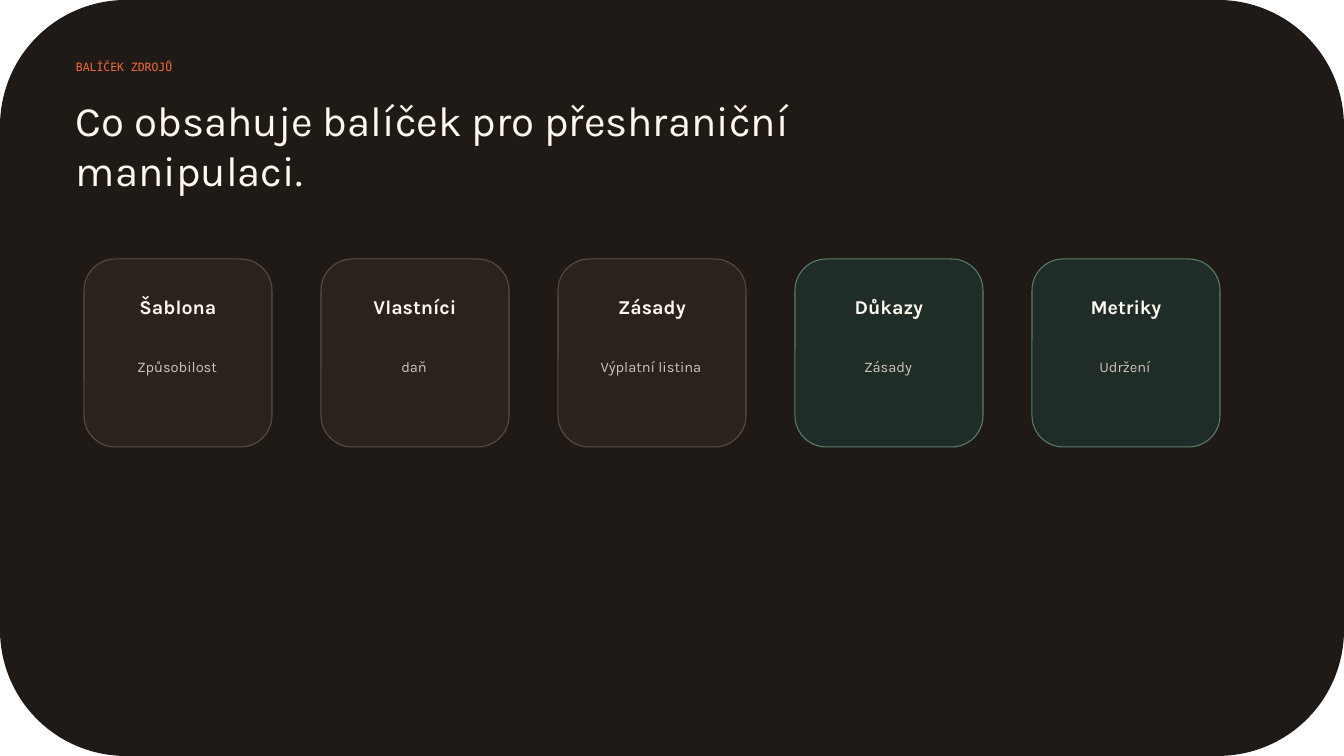
import pptx
import pptx.dml.color
import pptx.enum.shapes
import pptx.enum.text
import pptx.util

RGBColor = pptx.dml.color.RGBColor
Align = pptx.enum.text.PP_ALIGN

INK = RGBColor(0x20, 0x1A, 0x16)
CREAM = RGBColor(0xFF, 0xF9, 0xEF)
SAND = RGBColor(0xCF, 0xC4, 0xB8)
ORANGE = RGBColor(0xF2, 0x6B, 0x3A)
BROWN = RGBColor(0x2A, 0x22, 0x1D)
BROWN_EDGE = RGBColor(0x5B, 0x4D, 0x44)
GREEN = RGBColor(0x1F, 0x2C, 0x27)
GREEN_EDGE = RGBColor(0x5C, 0x7E, 0x6B)

WIDTH, HEIGHT = 1344, 756
EMU_PER_PX = 914400 / 100.8
CARD_LEFT, CARD_TOP, CARD_SIZE, CARD_STEP = 84, 259, 188, 237

CARDS = [
    ("Šablona", "Způsobilost", BROWN, BROWN_EDGE),
    ("Vlastníci", "daň", BROWN, BROWN_EDGE),
    ("Zásady", "Výplatní listina", BROWN, BROWN_EDGE),
    ("Důkazy", "Zásady", GREEN, GREEN_EDGE),
    ("Metriky", "Udržení", GREEN, GREEN_EDGE),
]


def px(n):
    """Convert whole pixels to EMU."""
    return pptx.util.Emu(round(n * EMU_PER_PX))


class Deck:
    """Hold the text style and the current slide."""

    font = "Karla"
    mono = "DejaVu Sans Mono"

    def __init__(self, slide):
        """Keep the slide to draw on."""
        self.slide = slide

    def panel(self, x, y, w, h, fill, edge=None):
        """Add a rounded rectangle."""
        kind = pptx.enum.shapes.MSO_SHAPE.ROUNDED_RECTANGLE
        sp = self.slide.shapes.add_shape(kind, px(x), px(y), px(w), px(h))
        sp.shadow.inherit = False
        sp.fill.solid()
        sp.fill.fore_color.rgb = fill
        if edge is None:
            sp.line.fill.background()
        else:
            sp.line.color.rgb = edge
            sp.line.width = pptx.util.Pt(0.75)

    def set_text(self, sp, text, size, color, align=Align.LEFT, font=None, bold=False):
        """Format a shape's text frame and add one run."""
        tf = sp.text_frame
        tf.word_wrap = True
        tf.auto_size = pptx.enum.text.MSO_AUTO_SIZE.NONE
        tf.vertical_anchor = pptx.enum.text.MSO_ANCHOR.TOP
        tf.margin_left = tf.margin_right = tf.margin_top = tf.margin_bottom = 0
        p = tf.paragraphs[0]
        p.alignment = align
        r = p.add_run()
        r.text = text
        r.font.name = font or self.font
        r.font.size = pptx.util.Pt(size)
        r.font.bold = bold
        r.font.color.rgb = color

    def text(self, x, y, w, h, *args, **style):
        """Add a text box."""
        sp = self.slide.shapes.add_textbox(px(x), px(y), px(w), px(h))
        self.set_text(sp, *args, **style)

    def title(self, x, y, w, h, *args, **style):
        """Place the title placeholder in front of earlier elements."""
        sp = self.slide.shapes.title
        sp.left, sp.top, sp.width, sp.height = px(x), px(y), px(w), px(h)
        sp.element.getparent().append(sp.element)
        self.set_text(sp, *args, **style)

    def card(self, x, y, heading, detail, fill, edge):
        """Add a card with a heading and a detail line."""
        self.panel(x, y, CARD_SIZE, CARD_SIZE, fill, edge)
        self.text(x + 19, y + 36, 150, 33, heading, 14, CREAM, align=Align.CENTER, bold=True)
        self.text(x + 15, y + 99, 156, 57, detail, 10.5, SAND, align=Align.CENTER)


def main():
    """Build the slide and save it."""
    prs = pptx.Presentation()
    prs.slide_width, prs.slide_height = px(WIDTH), px(HEIGHT)
    deck = Deck(prs.slides.add_slide(prs.slide_layouts[5]))
    deck.panel(0, 0, WIDTH, HEIGHT, INK)
    deck.text(76, 60, 463, 28, "BALÍČEK ZDROJŮ", 8.2, ORANGE, font=deck.mono)
    deck.title(76, 94, 838, 72, "Co obsahuje balíček pro přeshraniční manipulaci.", 30, CREAM)
    for i, card in enumerate(CARDS):
        deck.card(CARD_LEFT + i * CARD_STEP, CARD_TOP, *card)
    prs.save("out.pptx")


if __name__ == "__main__":
    main()
